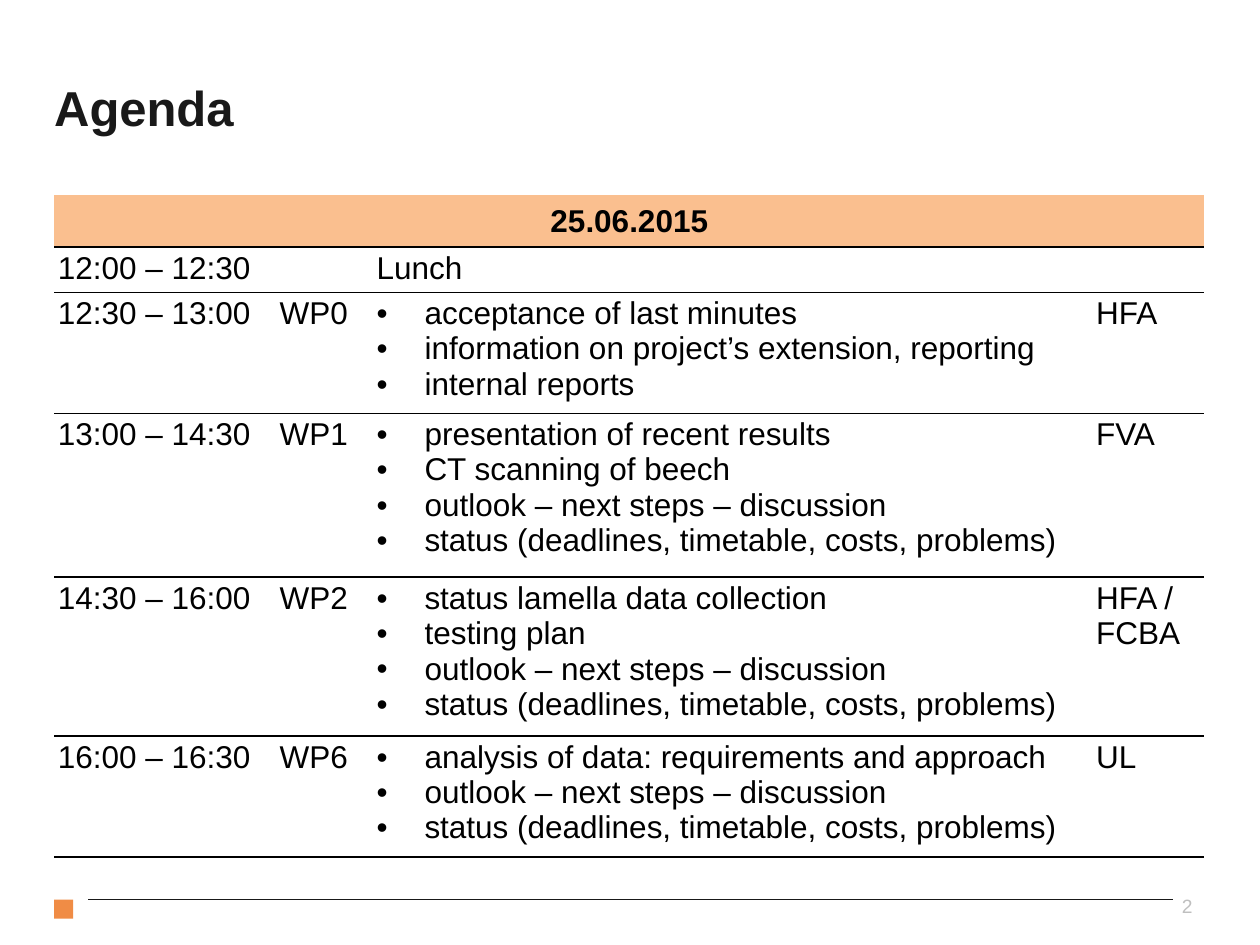
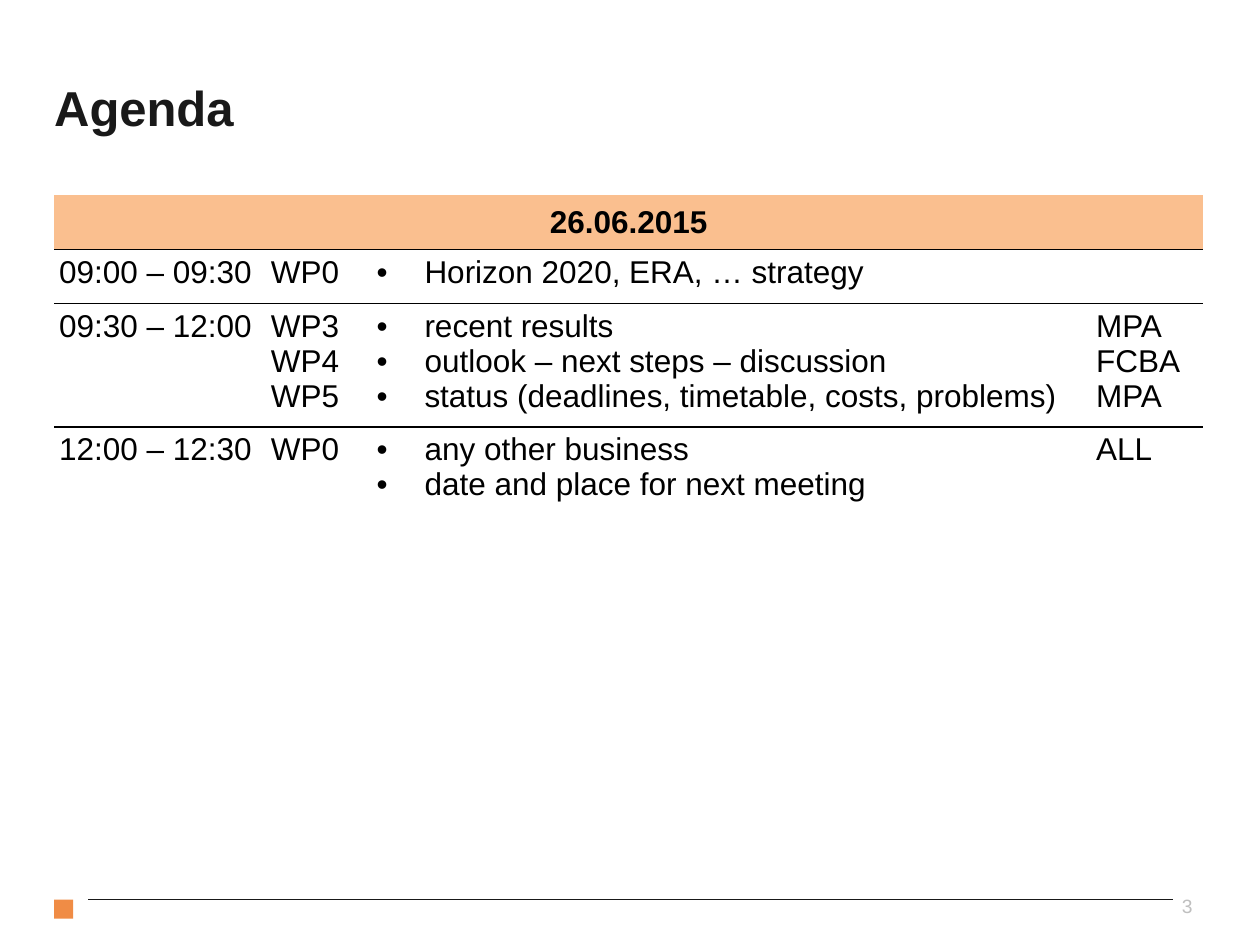
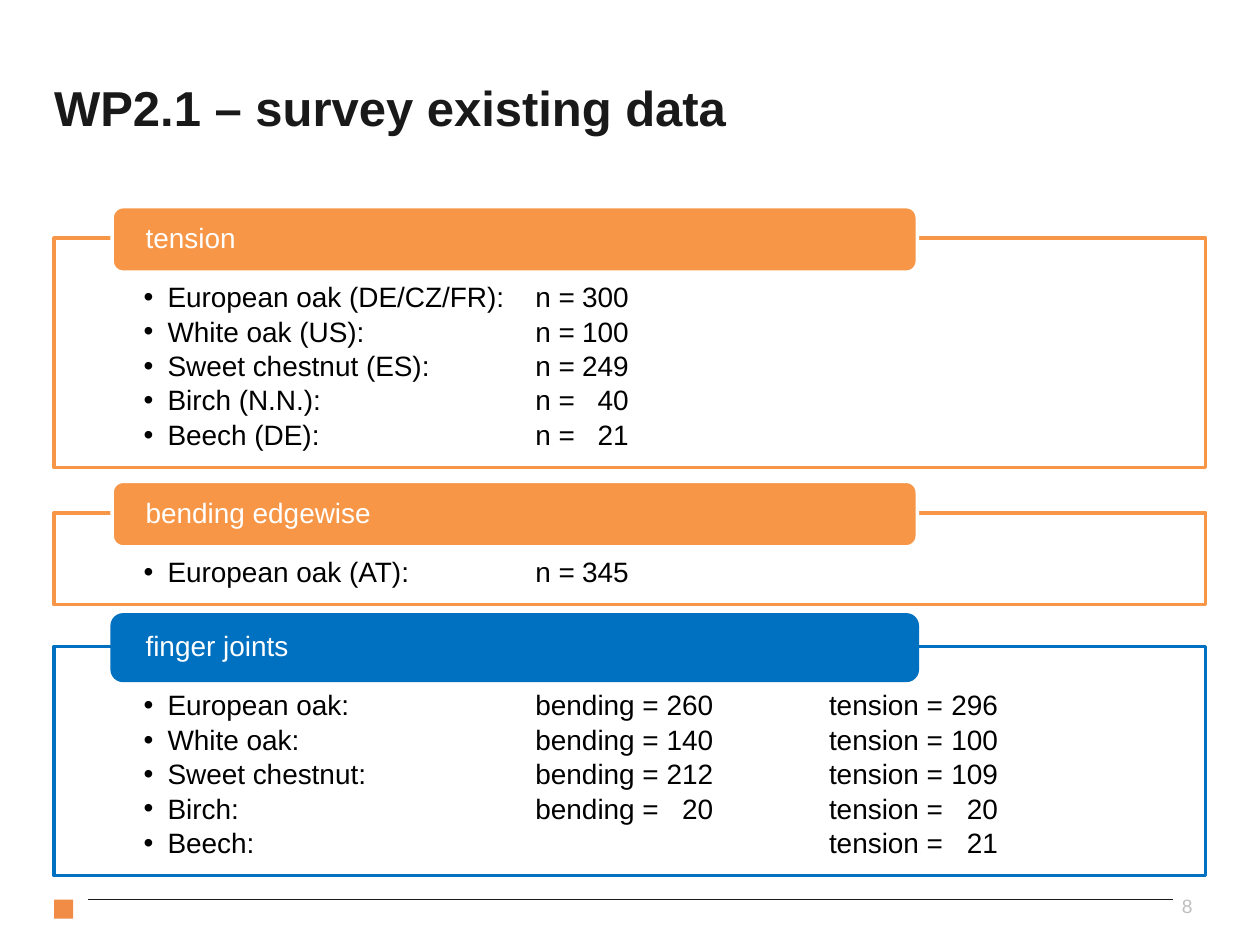
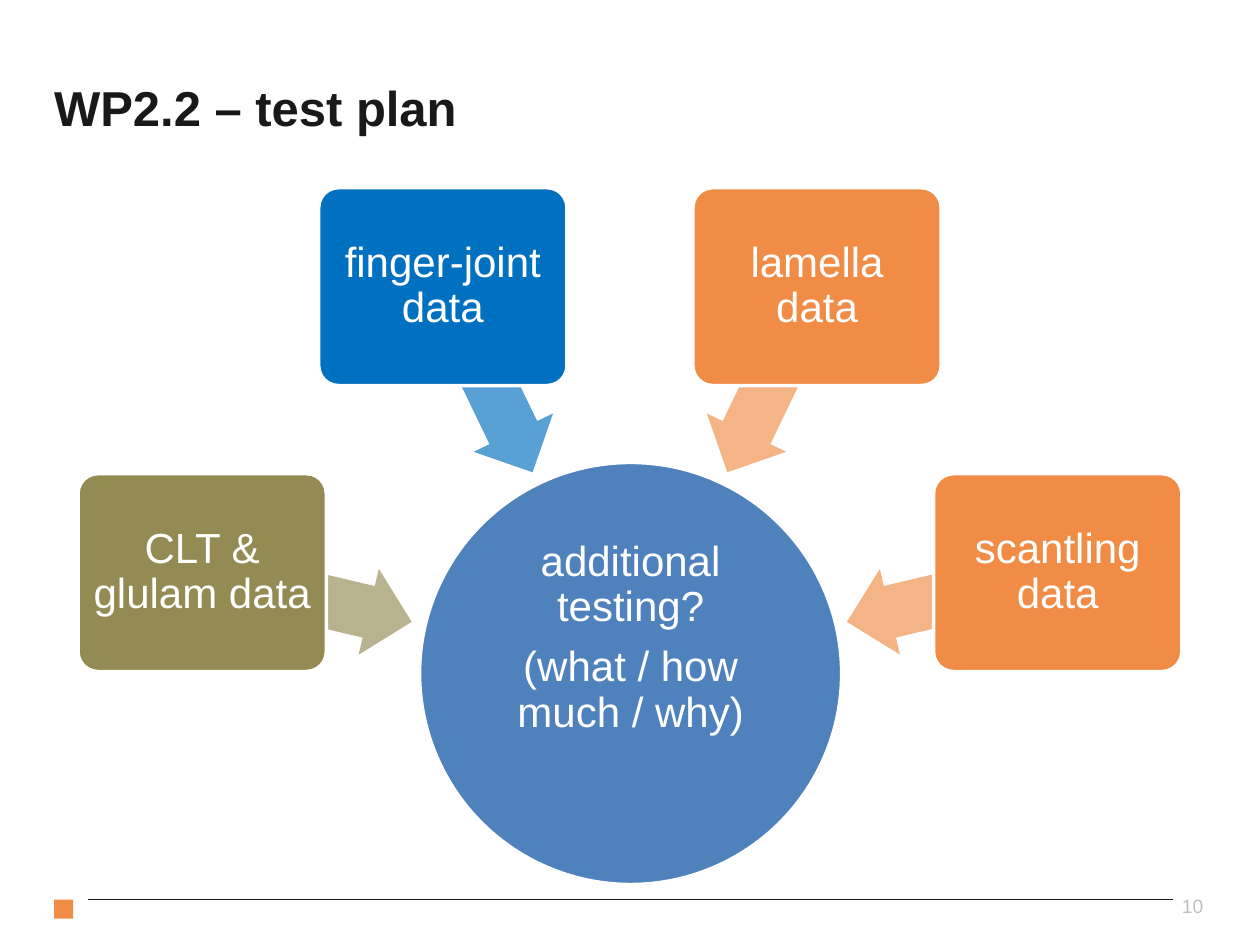
import pptx
import pptx.util
import pptx.dml.color
import pptx.enum.shapes
import pptx.enum.text
from pptx.oxml.ns import qn
from lxml import etree

Inches = pptx.util.Inches
Pt = pptx.util.Pt
SHAPE = pptx.enum.shapes.MSO_SHAPE
ALIGN = pptx.enum.text.PP_ALIGN
ANCHOR = pptx.enum.text.MSO_ANCHOR

FONT = "Arial"
BLACK, WHITE, INK, GREY = "000000", "FFFFFF", "191919", "BFBFBF"
ORANGE, PANEL_ORANGE, PEACH = "F08C45", "F79646", "FABF8F"
BLUE, CIRCLE_BLUE, OLIVE = "0070C0", "4F81BD", "948A54"
LEFT, PANEL_WIDTH = 0.43, 9.14
PLAIN_TABLE = "{2D5ABB26-0587-4C30-8999-92F81FD0307C}"

STATUS = "status (deadlines, timetable, costs, problems)"
OUTLOOK = "outlook – next steps – discussion"


def rgb(value):
    return pptx.dml.color.RGBColor.from_string(value)


def write(frame, text, size=18, color=BLACK, bold=False, align=ALIGN.LEFT,
          spacing=None, after=0, indent=0, tabs=()):
    """Fill a text frame, one paragraph a line; an indent makes bullets."""
    frame.word_wrap = True
    for index, line in enumerate(text.split("\n")):
        para = frame.add_paragraph() if index else frame.paragraphs[0]
        properties = para._p.get_or_add_pPr()
        if indent:
            properties.set("marL", str(Inches(indent)))
            properties.set("indent", str(-Inches(indent)))
            etree.SubElement(properties, qn("a:buFont"), typeface=FONT)
            etree.SubElement(properties, qn("a:buChar"), char="•")
        if tabs:
            stops = etree.SubElement(properties, qn("a:tabLst"))
            for position, side in tabs:
                etree.SubElement(stops, qn("a:tab"), pos=str(Inches(position)), algn=side)
        para.alignment = align
        para.space_before = Pt(0)
        para.space_after = Pt(after)
        if spacing:
            para.line_spacing = spacing
        span = para.add_run()
        span.text = line
        span.font.name = FONT
        span.font.size = Pt(size)
        span.font.bold = bold
        span.font.color.rgb = rgb(color)


def set_margins(frame, left, top, right, bottom):
    frame.margin_left, frame.margin_top = Inches(left), Inches(top)
    frame.margin_right, frame.margin_bottom = Inches(right), Inches(bottom)


def add_block(page, kind, box, fill, line=None, opacity=100):
    shape = page.shapes.add_shape(kind, *[Inches(length) for length in box])
    shape.shadow.inherit = False
    shape.fill.solid()
    shape.fill.fore_color.rgb = rgb(fill)
    if opacity < 100:
        color = shape.fill._xPr.find(qn("a:solidFill"))[0]
        etree.SubElement(color, qn("a:alpha"), val=str(opacity * 1000))
    if line:
        shape.line.color.rgb = rgb(line)
        shape.line.width = Pt(2)
    else:
        shape.line.fill.background()
    return shape


def add_footer(page, number):
    rule = page.shapes.add_connector(
        pptx.enum.shapes.MSO_CONNECTOR.STRAIGHT,
        Inches(0.7), Inches(7.14), Inches(9.31), Inches(7.14))
    rule.line.color.rgb = rgb(INK)
    rule.line.width = Pt(1)
    etree.SubElement(rule._element.spPr, qn("a:effectLst"))
    add_block(page, SHAPE.RECTANGLE, (LEFT, 7.14, 0.15, 0.15), ORANGE)
    box = page.shapes.add_textbox(Inches(9.38), Inches(7.1), Inches(0.31), Inches(0.15))
    set_margins(box.text_frame, 0, 0, 0, 0)
    write(box.text_frame, str(number), size=11, color=GREY)


def add_page(deck, title, number):
    page = deck.slides.add_slide(deck.slide_layouts[5])
    add_footer(page, number)
    holder = page.shapes.title
    holder.left, holder.top = Inches(LEFT), Inches(0.57)
    holder.width, holder.height = Inches(6.62), Inches(0.51)
    frame = holder.text_frame
    set_margins(frame, 0, 0, 0, 0)
    frame.vertical_anchor = ANCHOR.BOTTOM
    frame.auto_size = pptx.enum.text.MSO_AUTO_SIZE.NONE
    write(frame, title, size=28, color=INK, bold=True, spacing=Pt(28), after=12)
    return page


def underline(cell):
    line = etree.Element(qn("a:lnB"), w=str(Pt(1)))
    fill = etree.SubElement(line, qn("a:solidFill"))
    etree.SubElement(fill, qn("a:srgbClr"), val=BLACK)
    cell._tc.get_or_add_tcPr().insert(0, line)


def add_agenda(page, day, sessions, widths, heights, margin, closed):
    """Draw a day's timetable; closed adds a line below the last session."""
    table = page.shapes.add_table(
        len(heights), len(widths), Inches(LEFT), Inches(1.55),
        Inches(sum(widths)), Inches(sum(heights))).table
    table.first_row = table.horz_banding = False
    table._tbl.tblPr.find(qn("a:tableStyleId")).text = PLAIN_TABLE
    for column, width in zip(table.columns, widths):
        column.width = Inches(width)
    for row, height in zip(table.rows, heights):
        row.height = Inches(height)
    table.cell(0, 0).merge(table.cell(0, len(widths) - 1))

    for y, session in enumerate([(day, "", "", "")] + sessions):
        for x, text in enumerate(session):
            cell = table.cell(y, x)
            cell.margin_left = cell.margin_right = Inches(margin)
            cell.margin_top = cell.margin_bottom = Inches(margin)
            if y == 0:
                cell.vertical_anchor = ANCHOR.MIDDLE
                cell.fill.solid()
                cell.fill.fore_color.rgb = rgb(PEACH)
                write(cell.text_frame, text, bold=True, align=ALIGN.CENTER)
            else:
                cell.fill.background()
                bulleted = x == 2 and session[1]
                write(cell.text_frame, text, indent=0.38 if bulleted else 0)
            if closed or y < len(sessions):
                underline(cell)


def add_survey_panel(page, top, height, heading, rows, tabs, color, edge):
    """Draw a framed list with a heading banner over its top edge."""
    panel = add_block(page, SHAPE.RECTANGLE, (LEFT, top, PANEL_WIDTH, height),
                      WHITE, color, opacity=90)
    frame = panel.text_frame
    frame.vertical_anchor = ANCHOR.TOP
    set_margins(frame, 0.71, 0.36, 0.71, 0.12)
    write(frame, "\n".join("\t".join(row) for row in rows), size=16,
          spacing=0.9, after=2.4, indent=0.19, tabs=tabs)
    banner = add_block(page, SHAPE.ROUNDED_RECTANGLE,
                       (LEFT + 0.46, top - 0.25, 6.39, 0.52), color, edge)
    banner.text_frame.vertical_anchor = ANCHOR.MIDDLE
    set_margins(banner.text_frame, 0.24, 0, 0.24, 0)
    write(banner.text_frame, heading, size=16, color=WHITE, spacing=0.9)


def add_survey(page):
    count_tabs = [(3.11, "l"), (3.85, "r")]
    joint_tabs = [(3.11, "l"), (4.52, "r"), (5.44, "l"), (6.78, "r")]
    tension = [("European oak (DE/CZ/FR):", "300"), ("White oak (US):", "100"),
               ("Sweet chestnut (ES):", "249"), ("Birch (N.N.):", "40"),
               ("Beech (DE):", "21")]
    bending = [("European oak (AT):", "345")]
    joints = [("European oak:", "260", "296"), ("White oak:", "140", "100"),
              ("Sweet chestnut:", "212", "109"), ("Birch:", "20", "20"),
              ("Beech:", "", "21")]
    for top, height, heading, samples in [(1.89, 1.82, "tension", tension),
                                          (4.07, 0.73, "bending edgewise", bending)]:
        rows = [(wood, "n =", count) for wood, count in samples]
        add_survey_panel(page, top, height, heading, rows, count_tabs,
                         PANEL_ORANGE, WHITE)
    rows = [(wood, "bending =" if bent else "", bent, "tension =", pulled)
            for wood, bent, pulled in joints]
    add_survey_panel(page, 5.13, 1.82, "finger joints", rows, joint_tabs, BLUE, BLUE)


def add_source(page, label, color, node_at, arrow_box, angle):
    """Draw a data node and the arrow from it to the hub."""
    arrow = add_block(page, SHAPE.LEFT_ARROW, arrow_box, color, opacity=65)
    arrow.adjustments[0], arrow.adjustments[1] = 0.6, 0.5
    arrow.rotation = angle
    node = add_block(page, SHAPE.ROUNDED_RECTANGLE, (*node_at, 1.97, 1.57), color, WHITE)
    node.adjustments[0] = 0.1
    node.text_frame.vertical_anchor = ANCHOR.MIDDLE
    set_margins(node.text_frame, 0.05, 0.05, 0.05, 0.05)
    write(node.text_frame, label, size=24, color=WHITE, align=ALIGN.CENTER, spacing=0.9)


def add_test_plan(page):
    hub = add_block(page, SHAPE.OVAL, (3.33, 3.67, 3.35, 3.35), CIRCLE_BLUE, WHITE)
    hub.text_frame.vertical_anchor = ANCHOR.MIDDLE
    set_margins(hub.text_frame, 0.02, 0.02, 0.02, 0.58)
    write(hub.text_frame, "additional testing?\n(what / how much / why)", size=24,
          color=WHITE, align=ALIGN.CENTER, spacing=0.9, after=8.4)
    sources = [
        ("CLT & glulam data", OLIVE, (0.62, 3.76), (1.58, 4.39, 1.71, 0.7), 193.2),
        ("finger-joint data", BLUE, (2.53, 1.49), (3.05, 2.66, 1.64, 0.7), 244.2),
        ("lamella data", ORANGE, (5.5, 1.49), (5.31, 2.66, 1.64, 0.7), 295.8),
        ("scantling data", ORANGE, (7.41, 3.76), (6.7, 4.39, 1.71, 0.7), 346.8),
    ]
    for source in sources:
        add_source(page, *source)


def main():
    deck = pptx.Presentation()
    deck.slide_width, deck.slide_height = Inches(10), Inches(7.5)

    first_day = [
        ("12:00 – 12:30", "", "Lunch", ""),
        ("12:30 – 13:00", "WP0", "acceptance of last minutes\n"
         "information on project’s extension, reporting\ninternal reports", "HFA"),
        ("13:00 – 14:30", "WP1", "presentation of recent results\n"
         f"CT scanning of beech\n{OUTLOOK}\n{STATUS}", "FVA"),
        ("14:30 – 16:00", "WP2", "status lamella data collection\n"
         f"testing plan\n{OUTLOOK}\n{STATUS}", "HFA / FCBA"),
        ("16:00 – 16:30", "WP6", "analysis of data: requirements and approach\n"
         f"{OUTLOOK}\n{STATUS}", "UL"),
    ]
    second_day = [
        ("09:00 – 09:30", "WP0", "Horizon 2020, ERA, … strategy", ""),
        ("09:30 – 12:00", "WP3\nWP4\nWP5", f"recent results\n{OUTLOOK}\n{STATUS}",
         "MPA\nFCBA\nMPA"),
        ("12:00 – 12:30", "WP0", "any other business\ndate and place for next meeting",
         "ALL"),
    ]
    add_agenda(add_page(deck, "Agenda", 2), "25.06.2015", first_day,
               widths=(1.76, 0.77, 5.71, 0.89),
               heights=(0.41, 0.36, 0.96, 1.3, 1.19, 0.9), margin=0.03, closed=True)
    add_agenda(add_page(deck, "Agenda", 3), "26.06.2015", second_day,
               widths=(1.68, 0.84, 5.71, 0.89),
               heights=(0.43, 0.43, 0.91, 0.71), margin=0.04, closed=False)
    add_survey(add_page(deck, "WP2.1 – survey existing data", 8))
    add_test_plan(add_page(deck, "WP2.2 – test plan", 10))
    deck.save("out.pptx")


if __name__ == "__main__":
    main()
